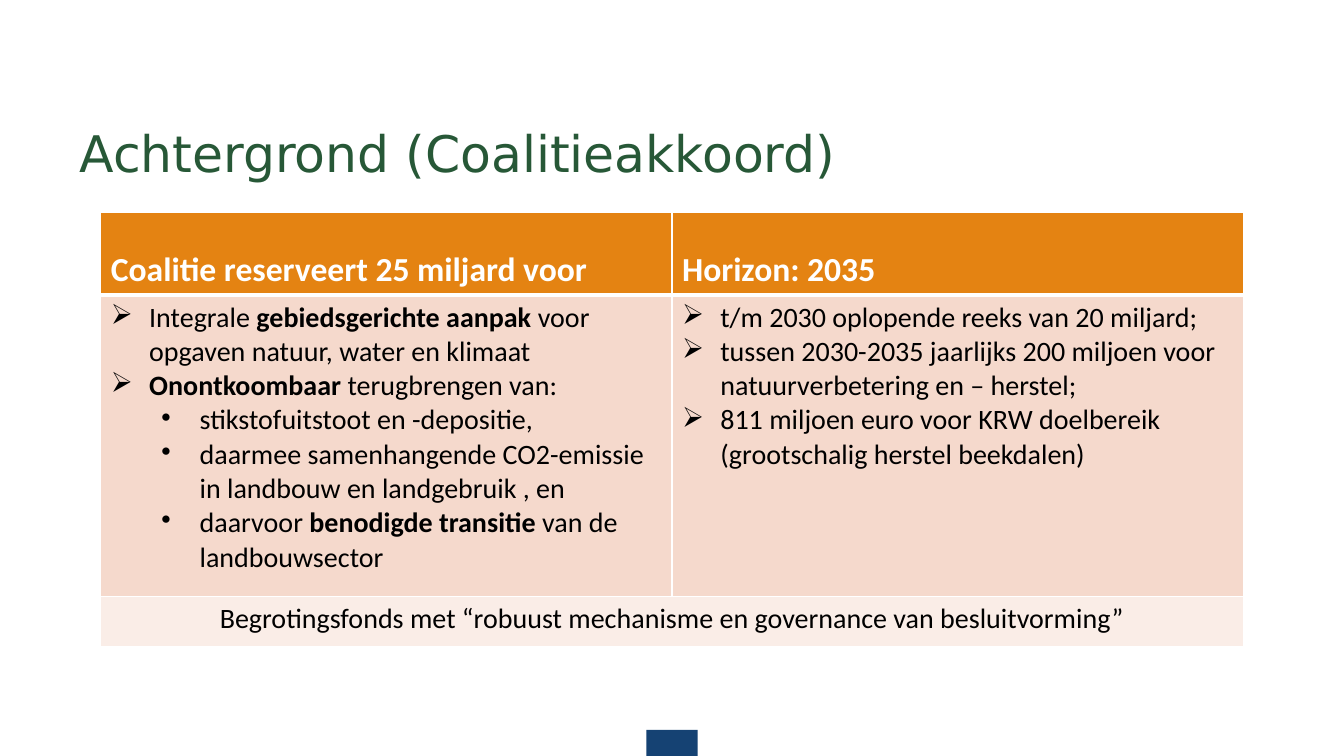
from lxml.etree import SubElement
from pptx import Presentation
from pptx.dml.color import RGBColor
from pptx.enum.shapes import MSO_SHAPE
from pptx.enum.text import MSO_ANCHOR, PP_ALIGN
from pptx.oxml.ns import qn
from pptx.util import Inches, Pt

WHITE, BLACK, ORANGE = "FFFFFF", "000000", "E48312"
BODY_FILL, FOOT_FILL = "F5D9CC", "FAEDE7"
HEADINGS = ["Coalitie reserveert 25 miljard voor", "Horizon: 2035"]
# Each point is (level, text); text between asterisks is bold.
COLUMNS = [
    [
        (0, "Integrale *gebiedsgerichte aanpak *voor opgaven natuur, water en klimaat"),
        (0, "*Onontkoombaar* terugbrengen van:"),
        (1, "stikstofuitstoot en -depositie,"),
        (1, "daarmee samenhangende CO2-emissie in landbouw en landgebruik , en"),
        (1, "daarvoor *benodigde transitie *van de landbouwsector"),
    ],
    [
        (0, "t/m 2030 oplopende reeks van 20 miljard;"),
        (0, "tussen 2030-2035 jaarlijks 200 miljoen voor natuurverbetering en – herstel;"),
        (0, "811 miljoen euro voor KRW doelbereik (grootschalig herstel beekdalen)"),
    ],
]
CONCLUSION = "Begrotingsfonds met “robuust mechanisme en governance van besluitvorming”"


def rgb(color):
    return RGBColor.from_string(color)


def write(para, text, size, color, font="Calibri", bold=False):
    """Fill a paragraph, switching bold at each asterisk."""
    for index, piece in enumerate(text.split("*")):
        if piece:
            span = para.add_run()
            span.text = piece
            span.font.name, span.font.size = font, Pt(size)
            span.font.color.rgb = rgb(color)
            span.font.bold = bold or index % 2 == 1


def add_bullet(para, level):
    para.level = level
    props = para._p.get_or_add_pPr()
    props.set("marL", str(Inches((0.38, 0.88)[level])))
    props.set("indent", str(-Inches(0.38)))
    SubElement(props, qn("a:buChar")).set("char", "➢•"[level])


def style_cell(cell, fill, top=1, bottom=1):
    """Set white borders (widths in points) and the cell fill."""
    props = cell._tc.get_or_add_tcPr()
    for side, width in (("L", 1), ("R", 1), ("T", top), ("B", bottom)):
        line = SubElement(props, qn(f"a:ln{side}"), w=str(Pt(width)))
        SubElement(SubElement(line, qn("a:solidFill")), qn("a:srgbClr"), val=WHITE)
    cell.fill.solid()
    cell.fill.fore_color.rgb = rgb(fill)


def add_title(page, left, top, width, height):
    box = page.shapes.add_textbox(left, top, width, height)
    frame = box.text_frame
    frame.word_wrap = True
    frame.vertical_anchor = MSO_ANCHOR.BOTTOM
    para = frame.paragraphs[0]
    para.line_spacing = 0.9
    write(para, "Achtergrond (Coalitieakkoord)", 36, "275837", "DejaVu Sans")


def add_agreement_table(page, left, top, width, row_heights):
    table = page.shapes.add_table(3, 2, left, top, width, sum(row_heights)).table
    for row, height in zip(table.rows, row_heights):
        row.height = height
    for column in table.columns:
        column.width = width // 2

    for index, (heading, points) in enumerate(zip(HEADINGS, COLUMNS)):
        head, body, foot = (table.cell(row, index) for row in range(3))
        style_cell(head, ORANGE, bottom=3)
        style_cell(body, BODY_FILL, top=3)
        style_cell(foot, FOOT_FILL)
        head.vertical_anchor = MSO_ANCHOR.BOTTOM
        write(head.text_frame.paragraphs[0], heading, 24, WHITE, bold=True)
        frame = body.text_frame
        for number, (level, text) in enumerate(points):
            para = frame.add_paragraph() if number else frame.paragraphs[0]
            add_bullet(para, level)
            write(para, text, 20, BLACK)

    conclusion = table.cell(2, 0)
    conclusion.merge(table.cell(2, 1))
    para = conclusion.text_frame.paragraphs[0]
    para.alignment = PP_ALIGN.CENTER
    para.space_after = Pt(6)
    write(para, CONCLUSION, 20, BLACK)


def add_footer_block(page, left, top, width, height):
    block = page.shapes.add_shape(MSO_SHAPE.RECTANGLE, left, top, width, height)
    block.shadow.inherit = False
    block.fill.solid()
    block.fill.fore_color.rgb = rgb("154273")
    block.line.fill.background()


def main():
    deck = Presentation()
    deck.slide_width, deck.slide_height = Inches(13.33), Inches(7.5)
    page = deck.slides.add_slide(deck.slide_layouts[6])
    add_footer_block(page, Inches(6.41), Inches(7.24), Inches(0.51), Inches(0.26))
    add_title(page, Inches(0.69), Inches(0.83), Inches(11.95), Inches(1.04))
    row_heights = [Inches(height) for height in (0.82, 2.99, 0.5)]
    add_agreement_table(page, Inches(1), Inches(2.11), Inches(11.33), row_heights)
    deck.save("out.pptx")


if __name__ == "__main__":
    main()
